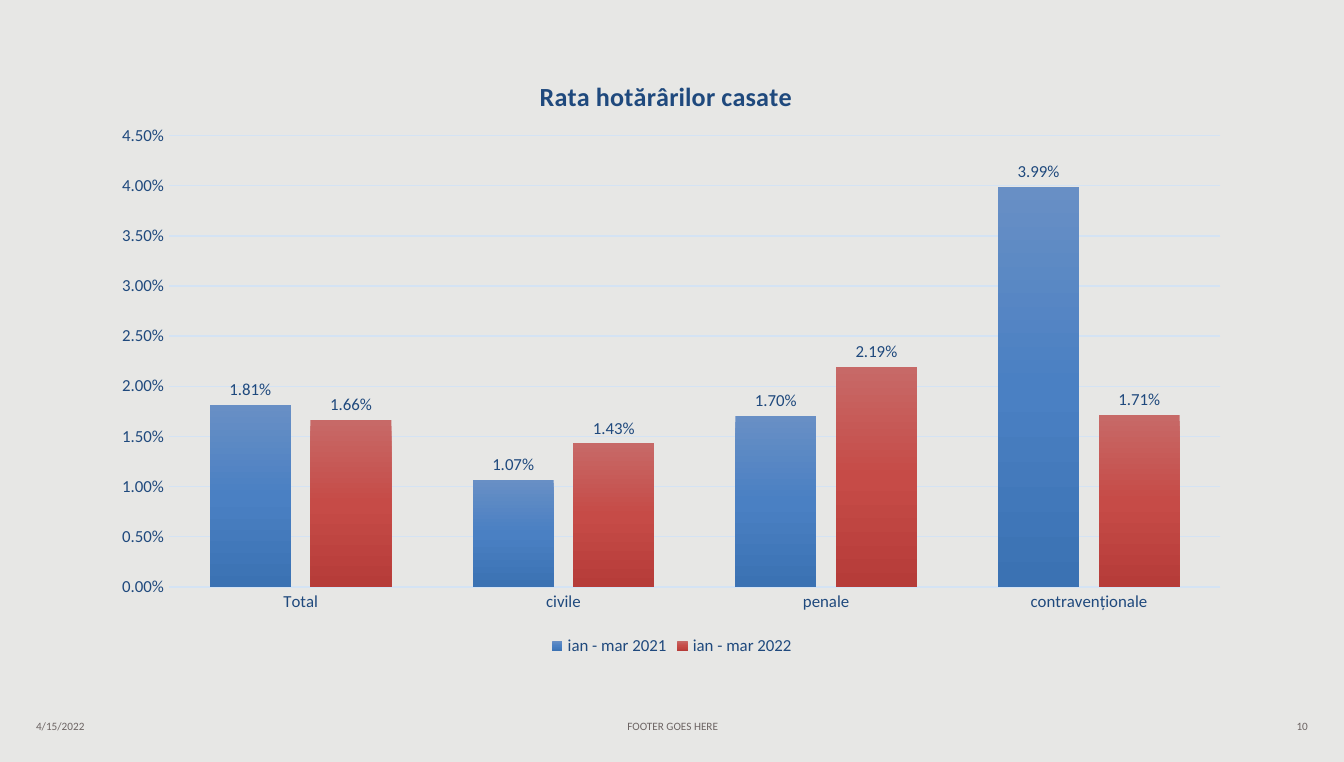
import dataclasses

import pptx
import pptx.chart.data
import pptx.dml.color
import pptx.enum.chart
import pptx.enum.text
import pptx.oxml
import pptx.oxml.ns
import pptx.util

Inches = pptx.util.Inches
Pt = pptx.util.Pt
qn = pptx.oxml.ns.qn
Align = pptx.enum.text.PP_ALIGN


@dataclasses.dataclass(frozen=True)
class Theme:
    font: str = "Calibri"
    background: str = "E7E7E5"
    navy: str = "1F497D"
    grid: str = "D4E3F4"
    grey: str = "6C6463"
    blues: tuple = ("688FC5", "4A80C3", "3B72B3")
    reds: tuple = ("C76967", "C64B47", "B63C39")
    title_size: float = 14
    label_size: float = 9
    footer_size: float = 6


def rgb(value):
    return pptx.dml.color.RGBColor.from_string(value)


class SlideBuilder:
    def __init__(self, prs, theme):
        self.theme = theme
        self.s = prs.slides.add_slide(prs.slide_layouts[6])
        fill = self.s.background.fill
        fill.solid()
        fill.fore_color.rgb = rgb(theme.background)

    def style_font(self, font, size, color, bold=False):
        font.name = self.theme.font
        font.size = Pt(size)
        font.bold = bold
        font.color.rgb = rgb(color)

    def style_line(self, line):
        line.color.rgb = rgb(self.theme.grid)
        line.width = Pt(0.75)

    def footer(self, text, left, width, align):
        sp = self.s.shapes.add_textbox(Inches(left), Inches(5.3), Inches(width), Inches(0.2))
        tf = sp.text_frame
        tf.word_wrap = True
        tf.vertical_anchor = pptx.enum.text.MSO_ANCHOR.MIDDLE
        p = tf.paragraphs[0]
        p.alignment = align
        p.space_after = Pt(6)
        r = p.add_run()
        r.text = text
        self.style_font(r.font, self.theme.footer_size, self.theme.grey)

    def gradient(self, series, element, colors):
        """Fill the columns from top to bottom with evenly spaced colours."""
        series.format.fill.gradient()
        stops = "".join(
            f'<a:gs pos="{i * 100000 // (len(colors) - 1)}"><a:srgbClr val="{c}"/></a:gs>'
            for i, c in enumerate(colors))
        new = pptx.oxml.parse_xml(
            f'<a:gradFill {pptx.oxml.ns.nsdecls("a")} rotWithShape="1">'
            f'<a:gsLst>{stops}</a:gsLst><a:lin ang="5400000" scaled="0"/></a:gradFill>')
        props = element.find(qn("c:spPr"))
        props.replace(props.find(qn("a:gradFill")), new)

    def place(self, parent, index, **fractions):
        """Give a chart part a fixed place, in fractions of the chart."""
        for old in parent.findall(qn("c:layout")):
            parent.remove(old)
        target = '<c:layoutTarget val="inner"/>' if "w" in fractions else ""
        modes = "".join(f'<c:{k}Mode val="edge"/>' for k in ("x", "y"))
        values = "".join(f'<c:{k} val="{v}"/>' for k, v in fractions.items())
        parent.insert(index, pptx.oxml.parse_xml(
            f'<c:layout {pptx.oxml.ns.nsdecls("c")}><c:manualLayout>'
            f'{target}{modes}{values}</c:manualLayout></c:layout>'))

    def axis(self, axis):
        none = pptx.enum.chart.XL_TICK_MARK.NONE
        axis.major_tick_mark = axis.minor_tick_mark = none
        self.style_font(axis.tick_labels.font, self.theme.label_size, self.theme.navy)

    def percent(self, labels):
        labels.number_format = "0.00%"
        labels.number_format_is_linked = False

    def column_chart(self, title, categories, series, box):
        t = self.theme
        data = pptx.chart.data.CategoryChartData(number_format="0.00%")
        data.categories = categories
        for name, values, _ in series:
            data.add_series(name, values)
        kind = pptx.enum.chart.XL_CHART_TYPE.COLUMN_CLUSTERED
        chart = self.s.shapes.add_chart(kind, *map(Inches, box), data).chart
        root = chart.element
        chart.font.name = t.font
        chart.font.size = Pt(10)

        r = chart.chart_title.text_frame.paragraphs[0].add_run()
        r.text = title
        self.style_font(r.font, t.title_size, t.navy, bold=True)
        chart.chart_title.include_in_layout = False
        self.place(root.find(".//" + qn("c:title")), 1, x=0.38, y=0.05)
        self.place(root.find(".//" + qn("c:plotArea")), 0, x=0.06, y=0.15, w=0.92, h=0.73)

        self.axis(chart.category_axis)
        self.style_line(chart.category_axis.format.line)
        value_axis = chart.value_axis
        self.axis(value_axis)
        value_axis.minimum_scale = 0
        value_axis.maximum_scale = 0.045
        value_axis.major_unit = 0.005
        self.percent(value_axis.tick_labels)
        value_axis.format.line.fill.background()
        self.style_line(value_axis.major_gridlines.format.line)

        chart.has_legend = True
        chart.legend.position = pptx.enum.chart.XL_LEGEND_POSITION.BOTTOM
        chart.legend.include_in_layout = False
        self.style_font(chart.legend.font, t.label_size, t.navy)

        plot = chart.plots[0]
        plot.vary_by_categories = False
        plot.gap_width = 100
        plot.overlap = -24
        elements = root.findall(".//" + qn("c:ser"))
        for item, element, (_, _, colors) in zip(plot.series, elements, series):
            self.gradient(item, element, colors)
            labels = item.data_labels
            labels.show_value = True
            labels.position = pptx.enum.chart.XL_LABEL_POSITION.OUTSIDE_END
            self.percent(labels)
            self.style_font(labels.font, t.label_size, t.navy)


def main():
    prs = pptx.Presentation()
    prs.slide_width, prs.slide_height = Inches(10), Inches(5.67)
    theme = Theme()
    slide = SlideBuilder(prs, theme)
    slide.footer("4/15/2022", 0.17, 2.33, Align.LEFT)
    slide.footer("FOOTER GOES HERE", 3.42, 3.17, Align.CENTER)
    slide.footer("10", 7.5, 2.33, Align.RIGHT)
    slide.column_chart(
        "Rata hotărârilor casate",
        ("Total", "civile", "penale", "contravenționale"),
        (("ian - mar 2021", (0.0181, 0.0107, 0.017, 0.0399), theme.blues),
         ("ian - mar 2022", (0.0166, 0.0143, 0.0219, 0.0171), theme.reds)),
        (0.75, 0.32, 8.5, 4.6))
    prs.save("out.pptx")


if __name__ == "__main__":
    main()
